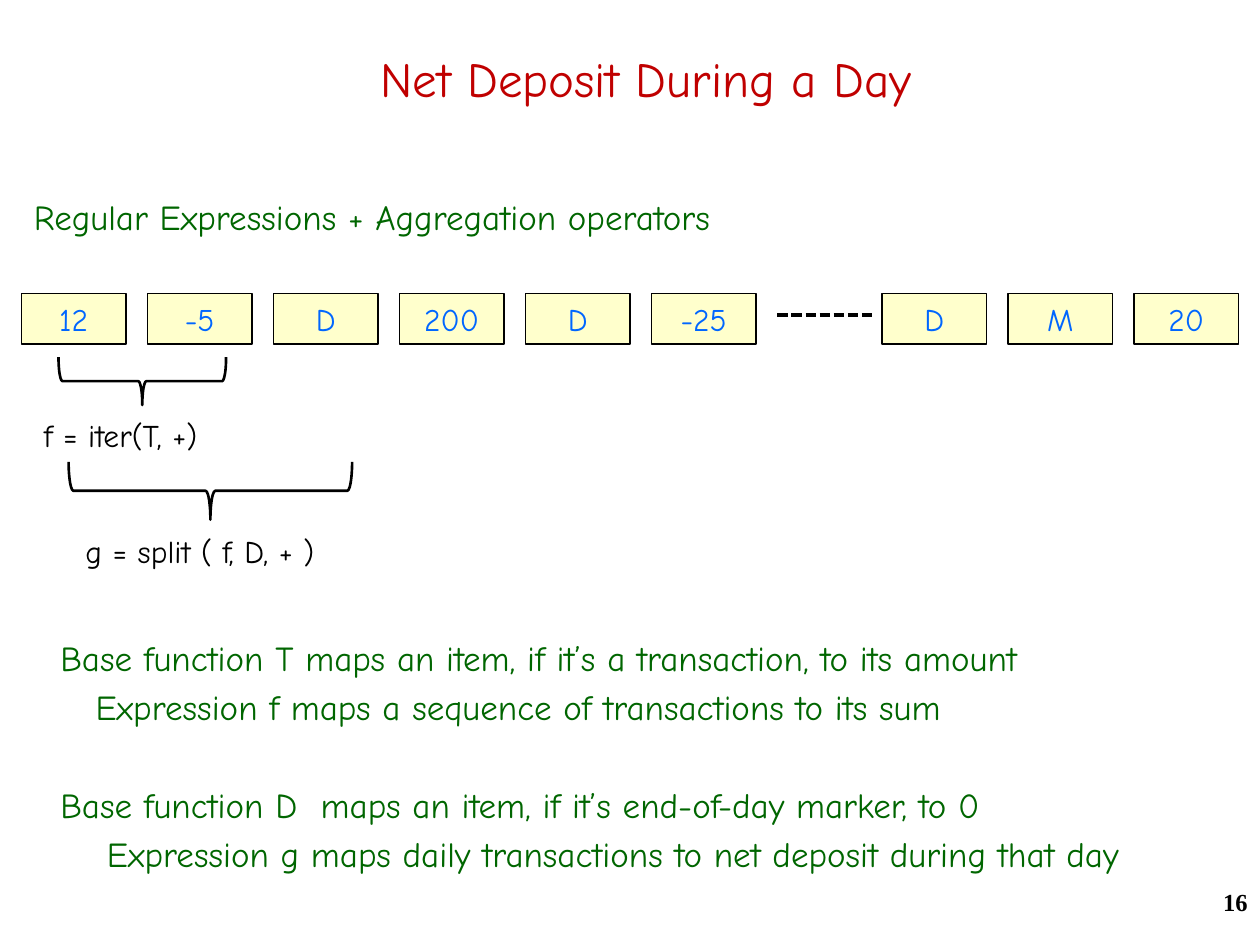
"""Build the slide on aggregating the net deposit during a day."""
from lxml import etree
from pptx import Presentation
from pptx.dml.color import RGBColor
from pptx.enum import dml, shapes, text
from pptx.oxml import ns
from pptx.util import Inches, Pt

COLORS = {"title": "C00000", "body": "006600", "item": "0066FF",
          "cell": "FFFFCC", "ink": "000000"}
LEFT, CENTER, RIGHT = text.PP_ALIGN.LEFT, text.PP_ALIGN.CENTER, text.PP_ALIGN.RIGHT


def color(name):
    return RGBColor.from_string(COLORS[name])


def write(shape, lines, size, ink, align=LEFT, font="Comic Neue", bold=False,
          anchor=text.MSO_ANCHOR.TOP):
    frame = shape.text_frame
    frame.word_wrap = True
    frame.vertical_anchor = anchor
    for index, (line, before, indent) in enumerate(lines):
        paragraph = frame.paragraphs[0] if index == 0 else frame.add_paragraph()
        paragraph.alignment = align
        paragraph.space_before = Pt(before)
        if indent:
            paragraph._p.get_or_add_pPr().set("marL", str(Inches(indent)))
        run = paragraph.add_run()
        run.text = line
        formats = {"name": font, "size": Pt(size), "bold": bold}
        for attribute, value in formats.items():
            setattr(run.font, attribute, value)
        run.font.color.rgb = color(ink)


presentation = Presentation()
presentation.slide_width, presentation.slide_height = Inches(10), Inches(7.5)
slide = presentation.slides.add_slide(presentation.slide_layouts[6])

explanation = [
    ("Base function T maps an item, if it’s a transaction, to its amount", 4, 0),
    ("Expression f maps a sequence of transactions to its sum", 4, 0.28),
    ("Base function D  maps an item, if it’s end-of-day marker, to 0", 32, 0),
    ("Expression g maps daily transactions to net deposit during that day", 4, 0.37),
]
text_boxes = [
    ((0.25, 0.33, 9.75, 0.58), [("Net Deposit During a Day", 0, 0)],
     {"size": 28, "ink": "title", "align": CENTER, "anchor": text.MSO_ANCHOR.MIDDLE}),
    ((7.92, 6.99, 2.08, 0.5), [("16", 0, 0)],
     {"size": 14, "ink": "ink", "align": RIGHT, "font": "Times New Roman", "bold": True}),
    ((0.17, 1.5, 9.62, 0.83), [("Regular Expressions + Aggregation operators", 4, 0)],
     {"size": 20, "ink": "body"}),
    ((0.38, 5, 9.62, 1.75), explanation, {"size": 20, "ink": "body"}),
    ((0.25, 3.25, 1.76, 0.4), [("f = iter(T, +)", 0, 0)], {"size": 18, "ink": "ink"}),
    ((0.58, 4.17, 2.26, 0.4), [("g = split ( f, D, + )", 0, 0)],
     {"size": 18, "ink": "ink"}),
]
for box, lines, formats in text_boxes:
    write(slide.shapes.add_textbox(*map(Inches, box)), lines, **formats)

for start, items in ((0.17, ["12", "-5", "D", "200", "D", "-25"]), (7, ["D", "M", "20"])):
    for column, item in enumerate(items):
        cell = slide.shapes.add_shape(
            shapes.MSO_SHAPE.RECTANGLE, Inches(start + column), Inches(2.33),
            Inches(0.83), Inches(0.4))
        cell.shadow.inherit = False
        cell.fill.solid()
        cell.fill.fore_color.rgb = color("cell")
        cell.line.color.rgb = color("ink")
        cell.line.width = Pt(1)
        write(cell, [(item, 0, 0)], 18, "item", CENTER)

ellipsis = slide.shapes.add_connector(
    shapes.MSO_CONNECTOR.STRAIGHT, Inches(6.17), Inches(2.5), Inches(6.92), Inches(2.5))
ellipsis.line.color.rgb = color("ink")
ellipsis.line.width = Pt(2)
ellipsis.line.dash_style = dml.MSO_LINE.SQUARE_DOT
etree.SubElement(ellipsis._element.spPr, ns.qn("a:effectLst"))

for box in ((0.94, 2.36, 0.38, 1.33), (1.44, 2.77, 0.46, 2.25)):
    brace = slide.shapes.add_shape(shapes.MSO_SHAPE.LEFT_BRACE, *map(Inches, box))
    brace.shadow.inherit = False
    brace.rotation = 90
    brace._element.spPr.xfrm.set("flipH", "1")
    brace.fill.background()
    brace.line.color.rgb = color("ink")
    brace.line.width = Pt(1.5)

presentation.save("out.pptx")
